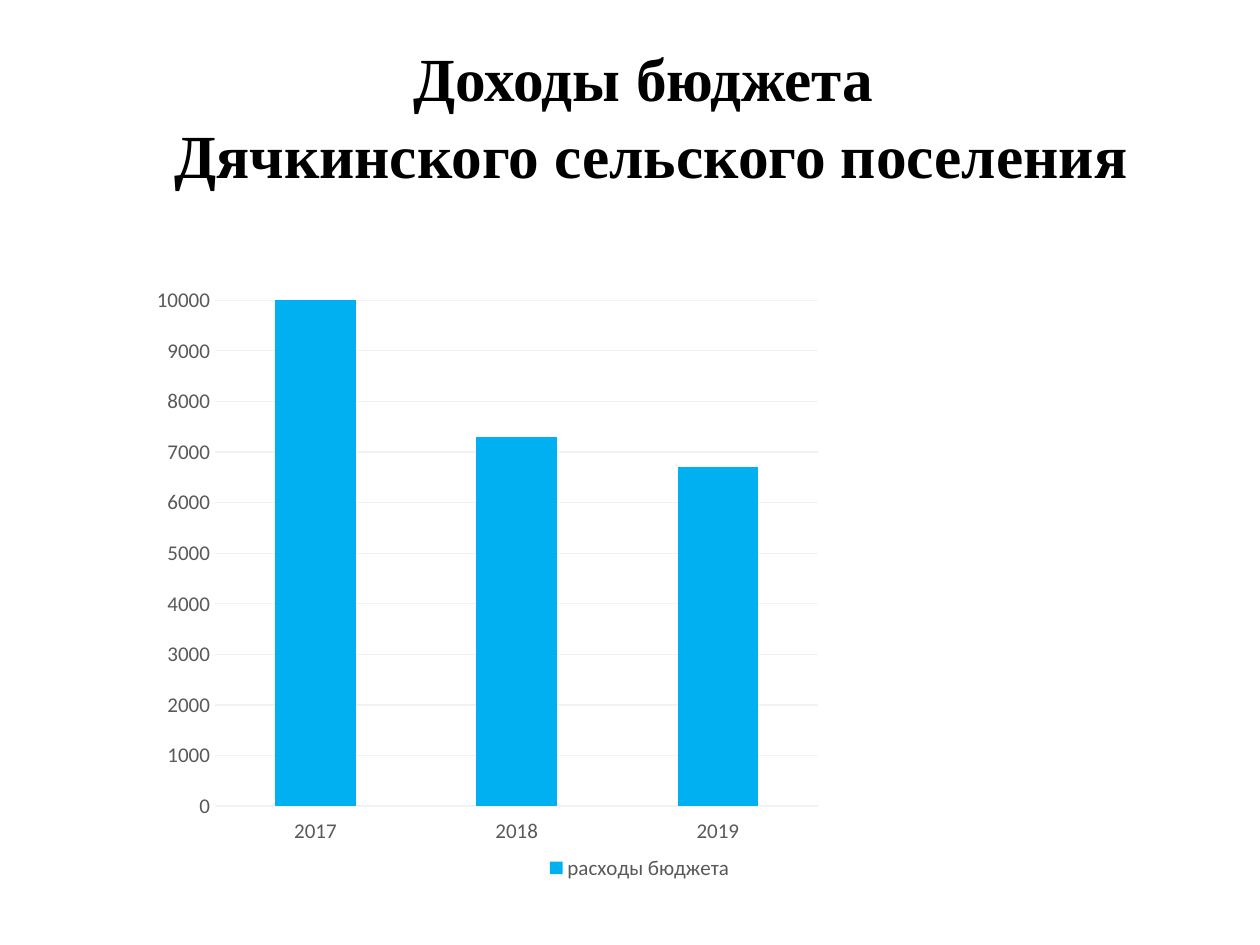
from dataclasses import dataclass

from lxml.etree import SubElement
from pptx import Presentation
from pptx.chart.data import CategoryChartData
from pptx.dml.color import RGBColor
from pptx.enum.chart import (XL_CHART_TYPE, XL_LEGEND_POSITION,
                             XL_TICK_LABEL_POSITION, XL_TICK_MARK)
from pptx.enum.text import MSO_ANCHOR, PP_ALIGN
from pptx.oxml.ns import qn
from pptx.util import Cm, Pt


@dataclass(frozen=True)
class Theme:
    black: RGBColor = RGBColor(0x00, 0x00, 0x00)
    grey: RGBColor = RGBColor(0x59, 0x59, 0x59)
    grid: RGBColor = RGBColor(0xF2, 0xF2, 0xF2)
    bar: RGBColor = RGBColor(0x00, 0xB0, 0xF0)
    serif: str = "Times New Roman"
    sans: str = "Calibri"
    title: Pt = Pt(35)
    label: Pt = Pt(12)
    hair: Pt = Pt(0.75)


THEME = Theme()


def style(font, name, size, color, bold=False):
    font.name, font.size, font.bold = name, size, bold
    font.color.rgb = color


def add_title(slide, lines, box):
    frame = slide.shapes.add_textbox(*box).text_frame
    frame.word_wrap = True
    frame.vertical_anchor = MSO_ANCHOR.MIDDLE
    for i, line in enumerate(lines):
        para = frame.add_paragraph() if i else frame.paragraphs[0]
        para.alignment = PP_ALIGN.CENTER
        para.line_spacing = 1.05
        run = para.add_run()
        run.text = line
        style(run.font, THEME.serif, THEME.title, THEME.black, True)


def style_axis(axis):
    axis.major_tick_mark = axis.minor_tick_mark = XL_TICK_MARK.NONE
    axis.format.line.fill.background()
    style(axis.tick_labels.font, THEME.sans, THEME.label, THEME.grey)


def place_plot(chart, x, y, w, h):
    """Fix the inner plot area as shares of the chart frame."""
    area = chart.plots[0]._element.getparent()
    layout = area.find(qn("c:layout"))
    if layout is None:
        layout = SubElement(area, qn("c:layout"))
        area.insert(0, layout)
    manual = SubElement(layout, qn("c:manualLayout"))
    parts = [("layoutTarget", "inner"), ("xMode", "edge"), ("yMode", "edge"),
             ("x", x), ("y", y), ("w", w), ("h", h)]
    for tag, val in parts:
        SubElement(manual, qn(f"c:{tag}")).set("val", str(val))


def add_bars(slide, years, name, sums, box):
    data = CategoryChartData()
    data.categories = years
    data.add_series(name, sums)
    chart = slide.shapes.add_chart(
        XL_CHART_TYPE.COLUMN_CLUSTERED, *box, data).chart
    chart.has_title = False
    style(chart.font, THEME.sans, THEME.label, THEME.grey)

    # Columns
    plot = chart.plots[0]
    plot.vary_by_categories = False
    plot.gap_width = 150
    fill = plot.series[0].format.fill
    fill.solid()
    fill.fore_color.rgb = THEME.bar

    # Axes and grid
    style_axis(chart.category_axis)
    chart.category_axis.tick_label_position = XL_TICK_LABEL_POSITION.LOW
    value = chart.value_axis
    style_axis(value)
    value.minimum_scale, value.maximum_scale = 0, 10000
    value.major_unit = 1000
    value.has_major_gridlines = True
    line = value.major_gridlines.format.line
    line.color.rgb = THEME.grid
    line.width = THEME.hair

    # Legend
    chart.has_legend = True
    chart.legend.position = XL_LEGEND_POSITION.BOTTOM
    chart.legend.include_in_layout = False
    style(chart.legend.font, THEME.sans, THEME.label, THEME.grey)
    place_plot(chart, 0.12, 0.04, 0.54, 0.83)


def main():
    deck = Presentation()
    deck.slide_width, deck.slide_height = Cm(25.4), Cm(19.05)
    slide = deck.slides.add_slide(deck.slide_layouts[6])

    # Heading; the space ending line one counts in its centring
    add_title(slide, ["Доходы бюджета ", "Дячкинского сельского поселения"],
              (Cm(1.7), Cm(0.7), Cm(22.86), Cm(3.18)))

    # Budget by year
    add_bars(slide, ["2017", "2018", "2019"], "расходы бюджета",
             [10300, 7300, 6700],
             (Cm(1.63), Cm(5.56), Cm(22.53), Cm(12.29)))
    deck.save("out.pptx")


if __name__ == "__main__":
    main()
